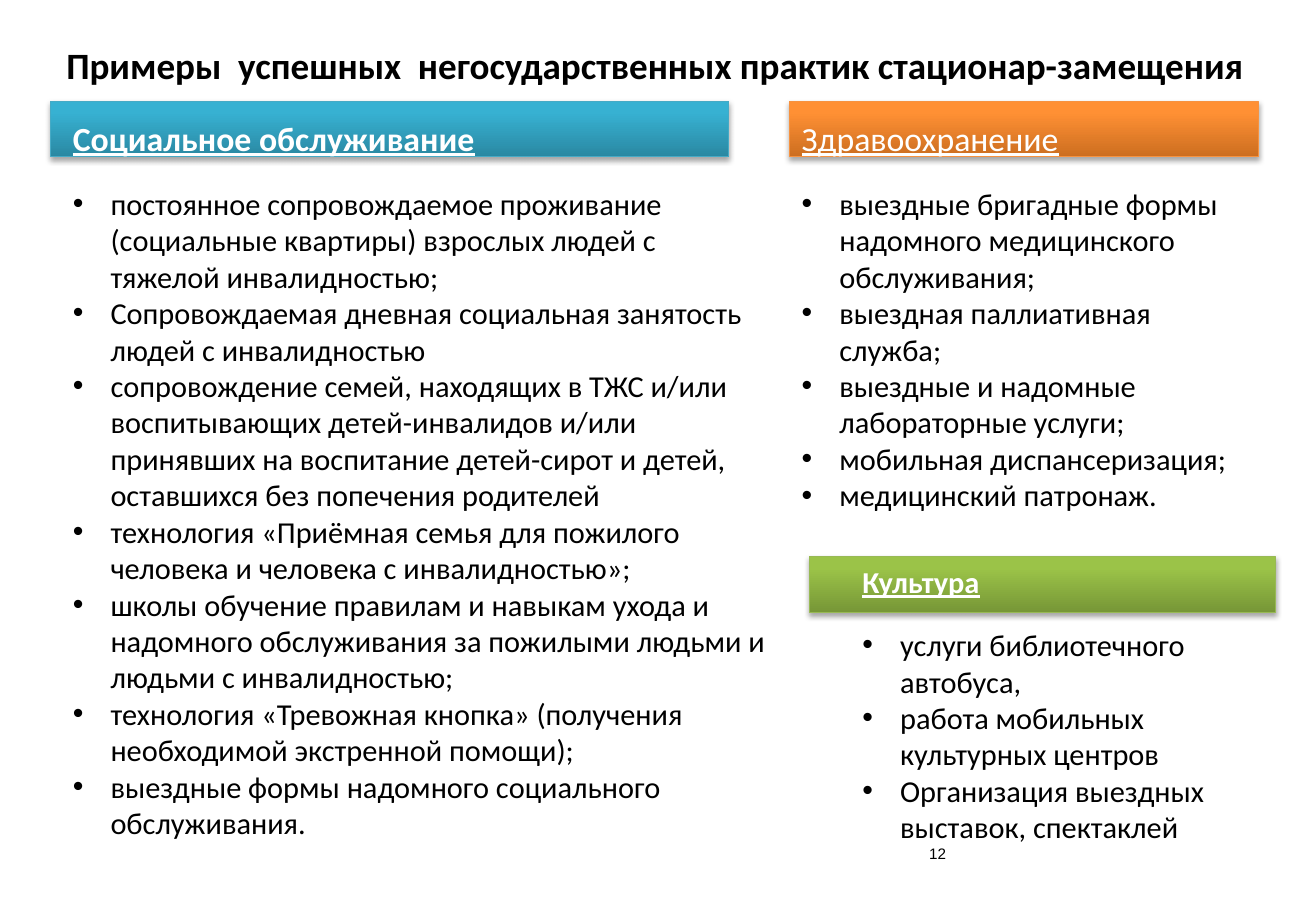
from lxml.etree import SubElement
from pptx import Presentation
from pptx.dml.color import RGBColor
from pptx.enum.shapes import MSO_SHAPE
from pptx.enum.text import MSO_ANCHOR, MSO_AUTO_SIZE, PP_ALIGN
from pptx.oxml.ns import qn
from pptx.util import Inches, Pt

COLUMNS, ROWS = 130, 90
CELL = Inches(1 / 12)
BLACK = RGBColor(0x00, 0x00, 0x00)
WHITE = RGBColor(0xFF, 0xFF, 0xFF)
TEAL = (RGBColor(0x2A, 0x88, 0xA2), RGBColor(0x37, 0xB1, 0xD2), RGBColor(0x46, 0xAA, 0xC5))
ORANGE = (RGBColor(0xCC, 0x6E, 0x20), RGBColor(0xFF, 0x90, 0x34), RGBColor(0xF6, 0x92, 0x40))
GREEN = (RGBColor(0x77, 0x97, 0x37), RGBColor(0x9B, 0xC3, 0x48), RGBColor(0x98, 0xB9, 0x55))

TITLE_FONT = {"name": "Calibri", "size": Pt(22), "bold": True}
ITEM_FONT = {"name": "Calibri", "size": Pt(18), "bold": False}
NUMBER_FONT = {"name": "Arial", "size": Pt(9)}

SECTIONS = [
    {
        "heading": "Социальное обслуживание",
        "font": {"name": "Calibri", "size": Pt(20), "bold": True, "underline": True},
        "colours": TEAL,
        "banner": (5, 10, 67, 5.5),
        "area": (6, 11, 71, 73.3),
        "items": [
            "постоянное сопровождаемое проживание (социальные квартиры) взрослых людей с тяжелой инвалидностью;",
            "Сопровождаемая дневная социальная занятость людей с инвалидностью",
            "сопровождение семей, находящих в ТЖС и/или воспитывающих детей-инвалидов и/или "
            "принявших на воспитание детей-сирот и детей, оставшихся без попечения родителей",
            "технология «Приёмная семья для пожилого человека и человека с инвалидностью»;",
            "школы обучение правилам и навыкам ухода и надомного обслуживания "
            "за пожилыми людьми и людьми с инвалидностью;",
            "технология «Тревожная кнопка» (получения необходимой экстренной помощи);",
            "выездные формы надомного социального обслуживания.",
        ],
    },
    {
        "heading": "Здравоохранение",
        "font": {"name": "Calibri", "size": Pt(20), "bold": False, "underline": True},
        "colours": ORANGE,
        "banner": (78, 10, 46.3, 5.5),
        "area": (78, 11, 45, 40.6),
        "items": [
            "выездные бригадные формы надомного медицинского обслуживания;",
            "выездная паллиативная служба;",
            "выездные и надомные лабораторные услуги;",
            "мобильная диспансеризация;",
            "медицинский патронаж.",
        ],
    },
    {
        "heading": "Культура",
        "font": {"name": "Calibri", "size": Pt(18), "bold": True, "underline": True},
        "colours": GREEN,
        "banner": (80, 55, 46, 5.5),
        "area": (84, 55, 39.8, 29.3),
        "items": [
            "услуги библиотечного автобуса,",
            "работа мобильных культурных центров",
            "Организация выездных выставок, спектаклей",
        ],
    },
]


def grid(*cells):
    """Turn grid cells into slide lengths."""
    return [round(cell * CELL) for cell in cells]


def apply(target, formats):
    """Set every attribute named in a dict of format values."""
    for attribute, setting in formats.items():
        setattr(target, attribute, setting)


def place(holder, area):
    """Move a text holder onto the grid and fix how its frame behaves."""
    apply(holder, dict(zip(("left", "top", "width", "height"), grid(*area))))
    apply(holder.text_frame, {"word_wrap": True, "auto_size": MSO_AUTO_SIZE.NONE,
                              "vertical_anchor": MSO_ANCHOR.TOP})


def write(paragraph, wording, font, colour=BLACK, before=0, align=PP_ALIGN.LEFT):
    """Put formatted wording into a paragraph."""
    apply(paragraph, {"space_before": Pt(before), "alignment": align})
    run = paragraph.add_run()
    run.text = wording
    apply(run.font, font)
    run.font.color.rgb = colour


def set_bullet(paragraph, mark=None):
    """Give a paragraph a hanging bullet, or none at all."""
    indent = Inches(0.31) if mark else 0
    properties = paragraph._p.get_or_add_pPr()
    properties.set("marL", str(indent))
    properties.set("indent", str(-indent))
    if mark:
        SubElement(properties, qn("a:buFont"), typeface="Arial")
        SubElement(properties, qn("a:buChar"), char=mark)
    else:
        SubElement(properties, qn("a:buNone"))


def add_banner(slide, area, colours):
    """Draw a shaded heading band behind the text."""
    dark, light, outline = colours
    banner = slide.shapes.add_shape(MSO_SHAPE.RECTANGLE, *grid(*area))
    banner.fill.gradient()
    banner.fill.gradient_angle = 90
    for stop, colour, position in zip(banner.fill.gradient_stops, (dark, light), (0, 0.8)):
        stop.color.rgb = colour
        stop.position = position
    banner.line.color.rgb = outline
    banner.line.width = Pt(0.75)
    banner.shadow.inherit = False
    effects = banner.element.spPr.find(qn("a:effectLst"))
    shadow = SubElement(effects, qn("a:outerShdw"), blurRad=str(Pt(3.1)), dist=str(Pt(1.8)),
                        dir="5400000", rotWithShape="0")
    tint = SubElement(shadow, qn("a:srgbClr"), val=str(BLACK))
    SubElement(tint, qn("a:alpha"), val="35000")
    slide.shapes.element.insert(2, banner.element)


def fill_section(holder, section):
    """Write a section's heading and its bulleted list."""
    place(holder, section["area"])
    frame = holder.text_frame
    write(frame.paragraphs[0], section["heading"], section["font"], WHITE)
    set_bullet(frame.paragraphs[0])
    for order, item in enumerate(section["items"]):
        paragraph = frame.add_paragraph()
        write(paragraph, item, ITEM_FONT, before=0 if order else 16)
        set_bullet(paragraph, "•")


def add_page_number(slide, number):
    """Place the page number near the foot of the slide."""
    page = slide.shapes.add_textbox(0, 0, CELL, CELL)
    place(page, (91.8, 83.4, 29.3, 4.8))
    apply(page.text_frame, dict.fromkeys(
        ("margin_left", "margin_top", "margin_right", "margin_bottom"), 0))
    write(page.text_frame.paragraphs[0], number, NUMBER_FONT)


def main():
    """Build the slide and save it."""
    deck = Presentation()
    deck.slide_width, deck.slide_height = grid(COLUMNS, ROWS)
    slide = deck.slides.add_slide(deck.slide_layouts.get_by_name("Comparison"))
    title, *bodies, spare = slide.placeholders
    spare.element.getparent().remove(spare.element)
    place(title, (4, 3.6, 121.4, 5.6))
    write(title.text_frame.paragraphs[0],
          "Примеры  успешных  негосударственных практик стационар-замещения",
          TITLE_FONT, align=PP_ALIGN.CENTER)
    for body, section in zip(bodies, SECTIONS):
        add_banner(slide, section["banner"], section["colours"])
        fill_section(body, section)
    add_page_number(slide, "12")
    deck.save("out.pptx")


if __name__ == "__main__":
    main()
